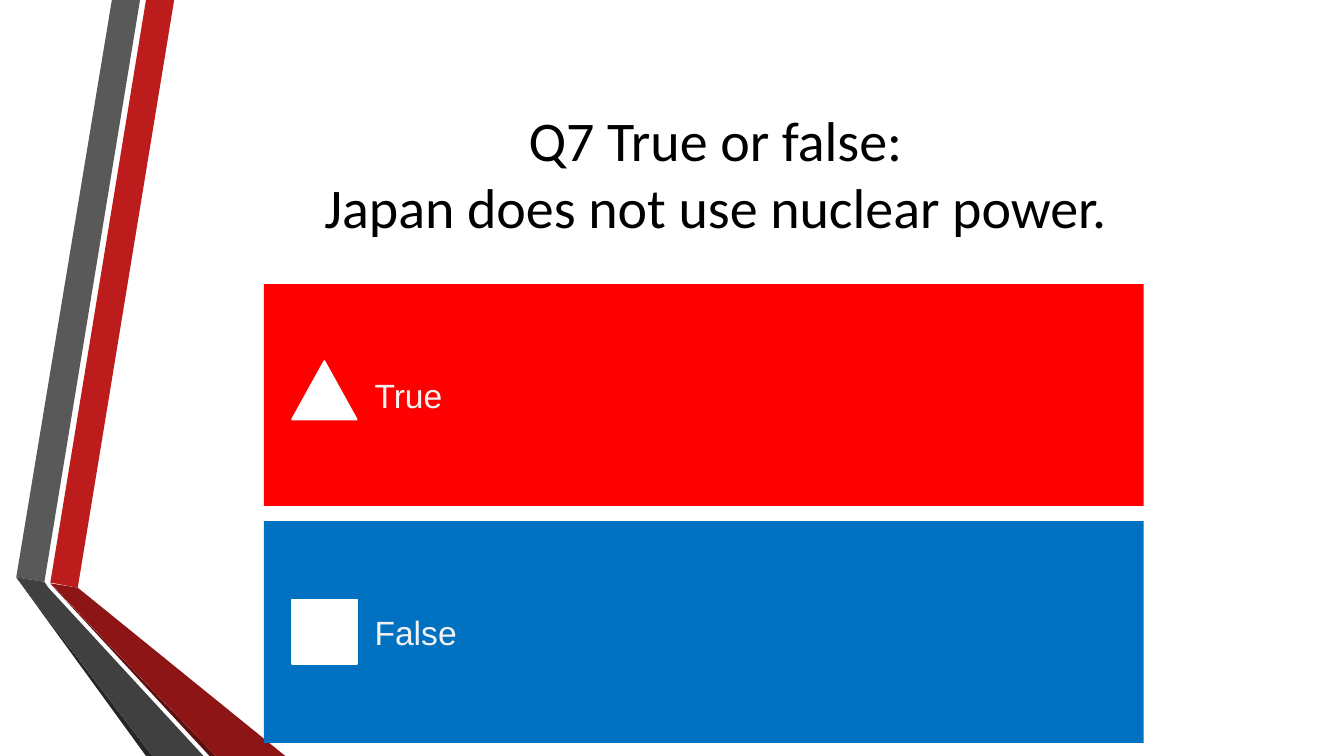
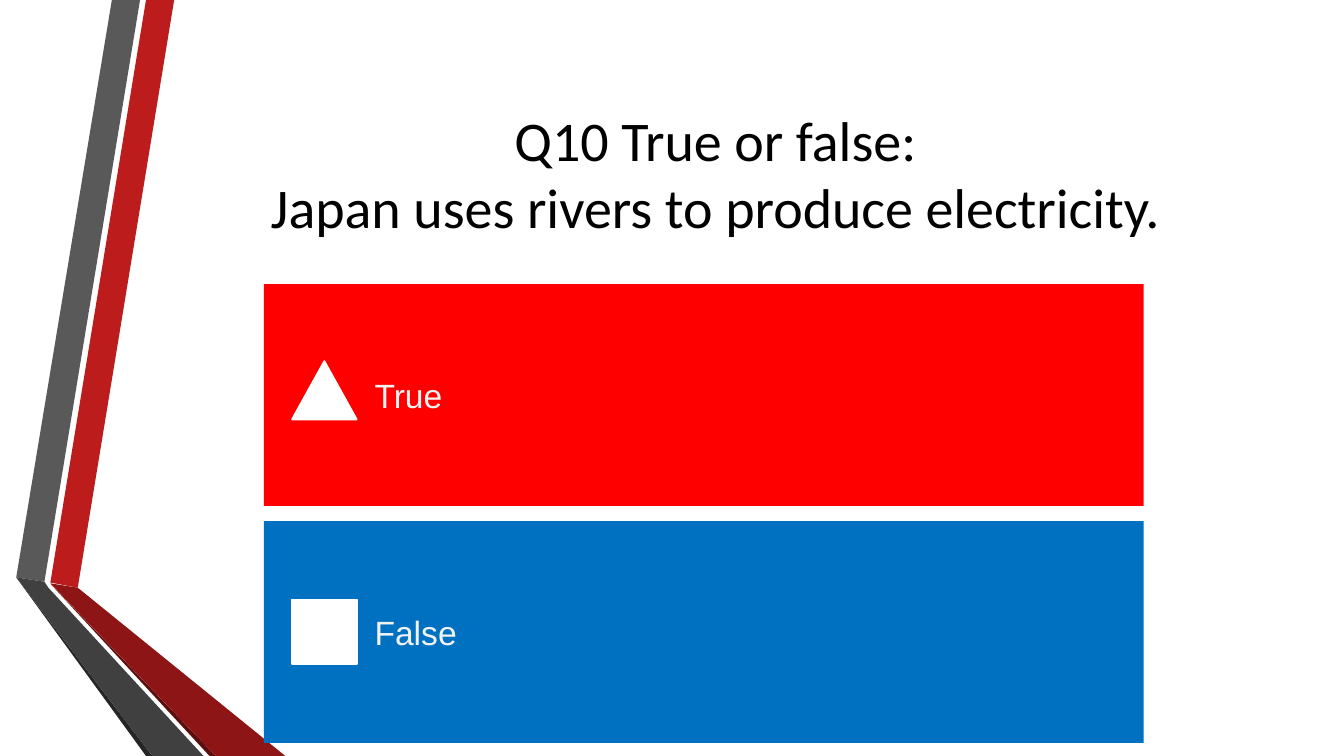
import pptx
import pptx.dml.color
import pptx.enum.shapes
import pptx.enum.text
import pptx.util

Cm, Pt = pptx.util.Cm, pptx.util.Pt
RGBColor = pptx.dml.color.RGBColor
MSO_SHAPE = pptx.enum.shapes.MSO_SHAPE
PP_ALIGN = pptx.enum.text.PP_ALIGN
MSO_ANCHOR = pptx.enum.text.MSO_ANCHOR

# Colours
BLACK = RGBColor(0x00, 0x00, 0x00)
WHITE = RGBColor(0xFF, 0xFF, 0xFF)
PALE = RGBColor(0xF2, 0xF2, 0xF2)
ANSWER_RED = RGBColor(0xFF, 0x00, 0x00)
ANSWER_BLUE = RGBColor(0x00, 0x70, 0xC0)
BAND_RED = RGBColor(0xBC, 0x1C, 0x1C)
BAND_GREY = RGBColor(0x59, 0x59, 0x59)
EDGE_GREY = RGBColor(0x26, 0x26, 0x26)
EDGE_RED = RGBColor(0x5E, 0x0E, 0x0E)
FOLD_RED = RGBColor(0x8D, 0x15, 0x15)
FOLD_GREY = RGBColor(0x40, 0x40, 0x40)

# Text formats
TITLE_FONT = {"name": "Calibri", "size": Pt(40)}
ANSWER_FONT = {"name": "Arial", "size": Pt(24)}
TITLE_PARA = {"alignment": PP_ALIGN.CENTER}
ANSWER_PARA = {"alignment": PP_ALIGN.LEFT, "space_before": Pt(4.8),
               "space_after": Pt(6)}

# Layout in centimetres: left, top, width, height
SLIDE_W, SLIDE_H = 33.87, 19.05
TITLE_BOX = (4.11, 1.9, 27.84, 4.88)
ANSWERS_BOX = (6.65, 7.16, 22.17, 11.56)
ANSWER_GAP = 0.38
ICON_INSET, ICON_W = 0.71, 1.63
TEXT_INSET = 2.79

# Folded ribbon: colour and corners in centimetres, back to front
RIBBON = [
    (BAND_RED, [(1.27, 14.68), (1.96, 14.81), (4.39, 0), (3.68, 0)]),
    (BAND_GREY, [(3.53, 0), (2.82, 0), (0.41, 14.55), (1.12, 14.66)]),
    (EDGE_GREY, [(0.41, 14.55), (3.68, SLIDE_H), (3.84, SLIDE_H)]),
    (EDGE_RED, [(1.27, 14.71), (5.28, SLIDE_H), (5.44, SLIDE_H)]),
    (FOLD_RED, [(1.27, 14.7), (5.44, SLIDE_H), (7.19, SLIDE_H),
                (1.96, 14.81)]),
    (FOLD_GREY, [(5.13, SLIDE_H), (1.22, 14.81), (1.12, 14.66),
                 (0.41, 14.55), (3.84, SLIDE_H)]),
]

# Answer text, colour, icon shape, icon height, icon shift from the middle
ANSWERS = [
    ("True", ANSWER_RED, MSO_SHAPE.ISOSCELES_TRIANGLE, 1.47, -0.12),
    ("False", ANSWER_BLUE, MSO_SHAPE.RECTANGLE, 1.63, 0),
]

QUESTIONS = [
    ("Q7 True or false:", "Japan does not use nuclear power."),
    ("Q10 True or false:", "Japan uses rivers to produce electricity."),
]


def set_all(obj, values):
    for name, value in values.items():
        setattr(obj, name, value)


def paint(sp, fill, line=None):
    sp.shadow.inherit = False
    sp.fill.solid()
    sp.fill.fore_color.rgb = fill
    if line is None:
        sp.line.fill.background()
    else:
        sp.line.color.rgb = line
        sp.line.width = Pt(1.25)


def write(sp, text, font, color, para):
    tf = sp.text_frame
    set_all(tf, {"word_wrap": True, "vertical_anchor": MSO_ANCHOR.MIDDLE})
    p = tf.paragraphs[0]
    p.text = text
    set_all(p, para)
    for r in p.runs:
        set_all(r.font, font)
        r.font.color.rgb = color


def add_ribbon(s, left, top):
    for color, corners in RIBBON:
        points = [((left + x) * 100, (top + y) * 100) for x, y in corners]
        fb = s.shapes.build_freeform(*points[0], scale=Cm(0.01))
        fb.add_line_segments(points[1:], close=True)
        paint(fb.convert_to_shape(), color)


def add_title(s, box, lines):
    sp = s.shapes.add_textbox(*map(Cm, box))
    write(sp, "\v".join(lines), TITLE_FONT, BLACK, TITLE_PARA)


def add_answer(s, box, text, color, icon, icon_h, shift):
    left, top, width, height = box
    sp = s.shapes.add_shape(MSO_SHAPE.RECTANGLE, *map(Cm, box))
    paint(sp, color)
    write(sp, text, ANSWER_FONT, PALE, ANSWER_PARA)
    sp.text_frame.margin_left = Cm(TEXT_INSET)
    icon_top = top + (height - icon_h) / 2 + shift
    sp = s.shapes.add_shape(icon, Cm(left + ICON_INSET), Cm(icon_top),
                            Cm(ICON_W), Cm(icon_h))
    paint(sp, WHITE, WHITE)


def add_answers(s, box):
    left, top, width, height = box
    row_h = (height + ANSWER_GAP) / len(ANSWERS) - ANSWER_GAP
    for i, answer in enumerate(ANSWERS):
        row_top = top + i * (row_h + ANSWER_GAP)
        add_answer(s, (left, row_top, width, row_h), *answer)


def add_question_slide(prs, lines):
    s = prs.slides.add_slide(prs.slide_layouts[6])
    add_ribbon(s, 0, 0)
    add_title(s, TITLE_BOX, lines)
    add_answers(s, ANSWERS_BOX)


def main():
    prs = pptx.Presentation()
    set_all(prs, {"slide_width": Cm(SLIDE_W), "slide_height": Cm(SLIDE_H)})
    for lines in QUESTIONS:
        add_question_slide(prs, lines)
    prs.save("out.pptx")


if __name__ == "__main__":
    main()
